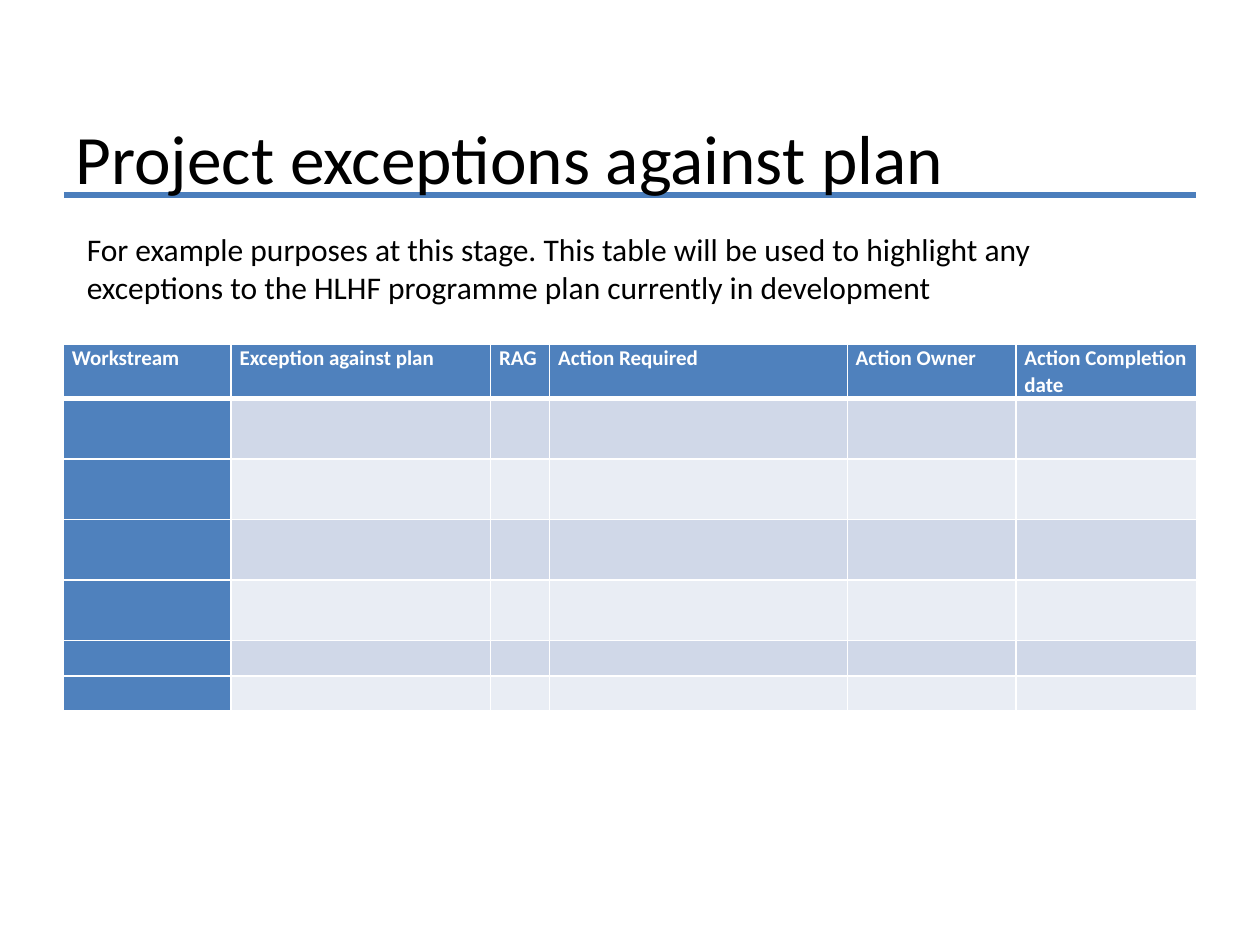
from dataclasses import dataclass

from lxml import etree
from pptx import Presentation
from pptx import util as u
from pptx.dml.color import RGBColor
from pptx.enum import shapes, text
from pptx.oxml.ns import qn

BLACK = RGBColor(0x00, 0x00, 0x00)
WHITE = RGBColor(0xFF, 0xFF, 0xFF)
RULE_BLUE = RGBColor(0x4B, 0x7E, 0xBC)
HEADER_BLUE = RGBColor(0x4F, 0x81, 0xBD)
BAND_DARK = RGBColor(0xD0, 0xD8, 0xE8)
BAND_LIGHT = RGBColor(0xE9, 0xED, 0xF4)


@dataclass(frozen=True)
class Column:
    heading: str
    width: float


COLUMNS = [
    Column("Workstream", 3.38),
    Column("Exception against plan", 5.23),
    Column("RAG", 1.19),
    Column("Action Required", 6.0),
    Column("Action Owner", 3.4),
    Column("Action Completion date", 3.64),
]
ROW_HEIGHTS = [1.09] + [1.22] * 4 + [0.71] * 2


def write_text(frame, content: str, *, size: float, color=BLACK, bold=False,
               spacing=None) -> None:
    frame.word_wrap = True
    paragraph = frame.paragraphs[0]
    paragraph.text = content
    paragraph.alignment = text.PP_ALIGN.LEFT
    if spacing:
        paragraph.line_spacing = spacing
    font = paragraph.font
    font.name, font.size, font.bold = "Calibri", u.Pt(size), bold
    font.color.rgb = color


def set_borders(cell, top: float, bottom: float) -> None:
    properties = cell._tc.get_or_add_tcPr()
    for side, width in (("L", 1), ("R", 1), ("T", top), ("B", bottom)):
        line = etree.SubElement(properties, qn(f"a:ln{side}"), w=str(u.Pt(width)))
        fill = etree.SubElement(line, qn("a:solidFill"))
        etree.SubElement(fill, qn("a:srgbClr"), val=str(WHITE))


def format_cell(cell, row: int, column: int) -> None:
    cell.margin_left = cell.margin_right = u.Cm(0.17)
    cell.margin_top = cell.margin_bottom = 0
    set_borders(cell, top=3 if row == 1 else 1, bottom=3 if row == 0 else 1)
    cell.fill.solid()
    if row == 0 or column == 0:
        cell.fill.fore_color.rgb = HEADER_BLUE
    else:
        cell.fill.fore_color.rgb = BAND_DARK if row % 2 else BAND_LIGHT
    write_text(cell.text_frame, COLUMNS[column].heading if row == 0 else "",
               size=12, color=WHITE, bold=True, spacing=1.07)


def add_rule(slide) -> None:
    rule = slide.shapes.add_connector(shapes.MSO_CONNECTOR.STRAIGHT,
                                      u.Cm(1.29), u.Cm(3.93), u.Cm(24.11), u.Cm(3.93))
    rule.line.color.rgb = RULE_BLUE
    rule.line.width = u.Pt(3)
    etree.SubElement(rule._element.spPr, qn("a:effectLst"))
    # Keep the rule behind the title's descenders
    slide.shapes._spTree.insert(2, rule._element)


def add_exceptions_table(slide) -> None:
    table = slide.shapes.add_table(
        len(ROW_HEIGHTS), len(COLUMNS), u.Cm(1.28), u.Cm(6.93),
        u.Cm(sum(column.width for column in COLUMNS)), u.Cm(sum(ROW_HEIGHTS))).table
    table.first_col = True
    for index, column in enumerate(COLUMNS):
        table.columns[index].width = u.Cm(column.width)
    for row, height in enumerate(ROW_HEIGHTS):
        table.rows[row].height = u.Cm(height)
        for column in range(len(COLUMNS)):
            format_cell(table.cell(row, column), row, column)


def main() -> None:
    presentation = Presentation()
    presentation.slide_width, presentation.slide_height = u.Cm(25.4), u.Cm(19.05)
    slide = presentation.slides.add_slide(presentation.slide_layouts[5])

    # Title and the rule under it
    title = slide.shapes.title
    title.left, title.top = u.Cm(1.27), u.Cm(2.34)
    title.width, title.height = u.Cm(22.86), u.Cm(1.63)
    write_text(title.text_frame, "Project exceptions against plan", size=39.6)
    title.text_frame.auto_size = text.MSO_AUTO_SIZE.NONE
    title.text_frame.vertical_anchor = text.MSO_ANCHOR.MIDDLE
    add_rule(slide)

    # Table of exceptions
    add_exceptions_table(slide)

    # Introductory note
    note = slide.shapes.add_textbox(u.Cm(1.5), u.Cm(4.52), u.Cm(22), u.Cm(1.8))
    write_text(note.text_frame,
               "For example purposes at this stage. This table will be used to highlight "
               "any exceptions to the HLHF programme plan currently in development",
               size=18)
    note.text_frame.auto_size = text.MSO_AUTO_SIZE.SHAPE_TO_FIT_TEXT

    presentation.save("out.pptx")


if __name__ == "__main__":
    main()
